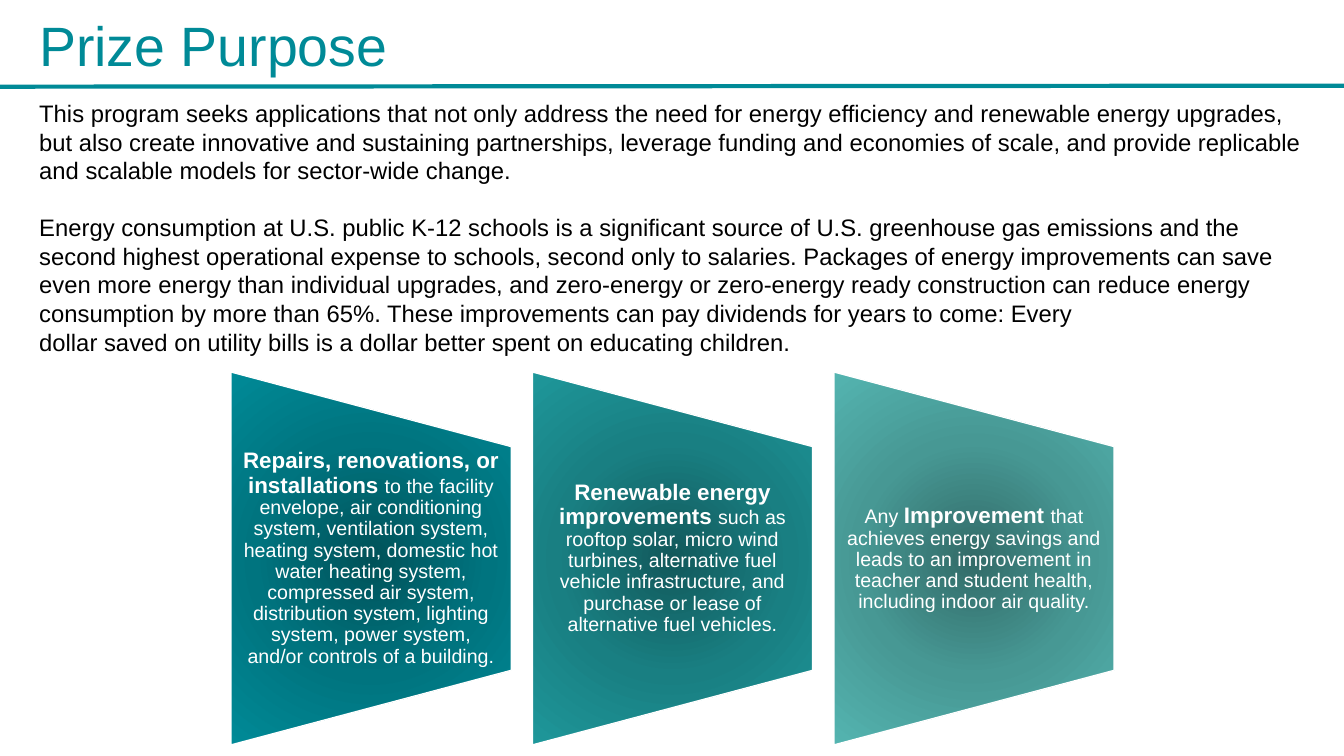
from dataclasses import dataclass

from lxml import etree
from pptx import Presentation
from pptx.dml.color import RGBColor
from pptx.enum.shapes import MSO_CONNECTOR, MSO_SHAPE
from pptx.enum.text import MSO_ANCHOR, PP_ALIGN
from pptx.oxml import parse_xml
from pptx.oxml.ns import nsdecls, qn
from pptx.util import Inches, Pt

TRAPEZOID = MSO_SHAPE.FLOWCHART_MANUAL_OPERATION
STRAIGHT = MSO_CONNECTOR.STRAIGHT
TOP, MIDDLE = MSO_ANCHOR.TOP, MSO_ANCHOR.MIDDLE
LEFT, CENTER = PP_ALIGN.LEFT, PP_ALIGN.CENTER


@dataclass(frozen=True)
class Theme:
    font: str = "Arial"
    teal: str = "008A97"
    black: str = "000000"
    white: str = "FFFFFF"
    title: float = 39.6
    body: float = 17
    strong: float = 16
    small: float = 14
    gap: float = 20.4
    blends: tuple = (
        ("005259", "00747F", "008A97"),
        ("12595B", "197F82", "1E979A"),
        ("326B68", "479894", "54B4B0"),
    )


THEME = Theme()

BODY = [
    "This program seeks applications that not only address the need for energy efficiency and renewable energy upgrades, but also create innovative and sustaining partnerships, leverage funding and economies of scale, and provide replicable and scalable models for sector-wide change.",
    "Energy consumption at U.S. public K-12 schools is a significant source of U.S. greenhouse gas emissions and the second highest operational expense to schools, second only to salaries. Packages of energy improvements can save even more energy than individual upgrades, and zero-energy or zero-energy ready construction can reduce energy consumption by more than 65%. These improvements can pay dividends for years to come: Every",
    "dollar saved on utility bills is a dollar better spent on educating children.",
]

CARDS = [
    ("", "Repairs, renovations, or installations ",
     "to the facility envelope, air conditioning system, ventilation system, heating system, domestic hot water heating system, compressed air system, distribution system, lighting system, power system, and/or controls of a building."),
    ("", "Renewable energy improvements ",
     "such as rooftop solar, micro wind turbines, alternative fuel vehicle infrastructure, and purchase or lease of alternative fuel vehicles."),
    ("Any ", "Improvement ",
     "that achieves energy savings and leads to an improvement in teacher and student health, including indoor air quality."),
]


def write(para, text, size=THEME.body, color=THEME.black, bold=False):
    run = para.add_run()
    run.text = text
    run.font.name = THEME.font
    run.font.size = Pt(size)
    run.font.bold = bold
    run.font.color.rgb = RGBColor.from_string(color)


class Page:
    def __init__(self, deck, theme):
        self.theme = theme
        self.shapes = deck.slides.add_slide(deck.slide_layouts[6]).shapes

    def text(self, box, paras, anchor=TOP, align=LEFT, pitch=None,
             inset=(0.1, 0.05), gaps=None, **style):
        frame = self.shapes.add_textbox(*map(Inches, box)).text_frame
        frame.word_wrap = True
        frame.vertical_anchor = anchor
        frame.margin_left = frame.margin_right = Inches(inset[0])
        frame.margin_top = frame.margin_bottom = Inches(inset[1])
        for row, runs in enumerate(paras):
            para = frame.add_paragraph() if row else frame.paragraphs[0]
            para.alignment = align
            if pitch:
                para.line_spacing = pitch
            if gaps and row in gaps:
                para.space_before = Pt(gaps[row])
            for words, extra in runs:
                write(para, words, **{**style, **extra})

    def rule(self, start, end):
        line = self.shapes.add_connector(STRAIGHT, *map(Inches, start + end))
        line.line.color.rgb = RGBColor.from_string(self.theme.teal)
        line.line.width = Pt(3)
        etree.SubElement(line._element.spPr, qn("a:effectLst"))

    def panel(self, box, blend):
        shape = self.shapes.add_shape(TRAPEZOID, *map(Inches, box))
        shape.rotation = 270
        shape.shadow.inherit = False
        shape.line.color.rgb = RGBColor.from_string(self.theme.white)
        shape.line.width = Pt(1)
        stops = "".join(
            f'<a:gs pos="{step * 50000}"><a:srgbClr val="{color}"/></a:gs>'
            for step, color in enumerate(blend))
        fill = parse_xml(
            f'<a:gradFill {nsdecls("a")} rotWithShape="1">'
            f'<a:gsLst>{stops}</a:gsLst><a:path path="circle">'
            '<a:fillToRect l="50000" t="50000" r="50000" b="50000"/>'
            '</a:path></a:gradFill>')
        shape._element.spPr.find(qn("a:prstGeom")).addnext(fill)

    def card(self, left, parts, blend):
        top, width, height = 3.69, 2.78, 3.7
        shift = (height - width) / 2
        self.panel((left - shift, top + shift, height, width), blend)
        lead, strong, rest = parts
        runs = [(strong, {"size": self.theme.strong, "bold": True}), (rest, {})]
        if lead:
            runs.insert(0, (lead, {}))
        self.text((left, top + height / 5, width, height * 0.6), [runs],
                  anchor=MIDDLE, align=CENTER, pitch=0.9, inset=(0.11, 0),
                  size=self.theme.small, color=self.theme.white)


def main():
    deck = Presentation()
    deck.slide_width, deck.slide_height = Inches(13.33), Inches(7.5)
    page = Page(deck, THEME)
    page.text((0.29, 0.13, 12.75, 0.71), [[("Prize Purpose", {})]],
              anchor=MIDDLE, pitch=0.9, size=THEME.title, color=THEME.teal)
    page.rule((0, 0.86), (13.33, 0.85))
    page.text((0.29, 0.93, 12.75, 2.68), [[(words, {})] for words in BODY],
              gaps={1: THEME.gap})
    for index, (parts, blend) in enumerate(zip(CARDS, THEME.blends)):
        page.card(2.29 + index * 2.99, parts, blend)
    deck.save("out.pptx")


if __name__ == "__main__":
    main()
